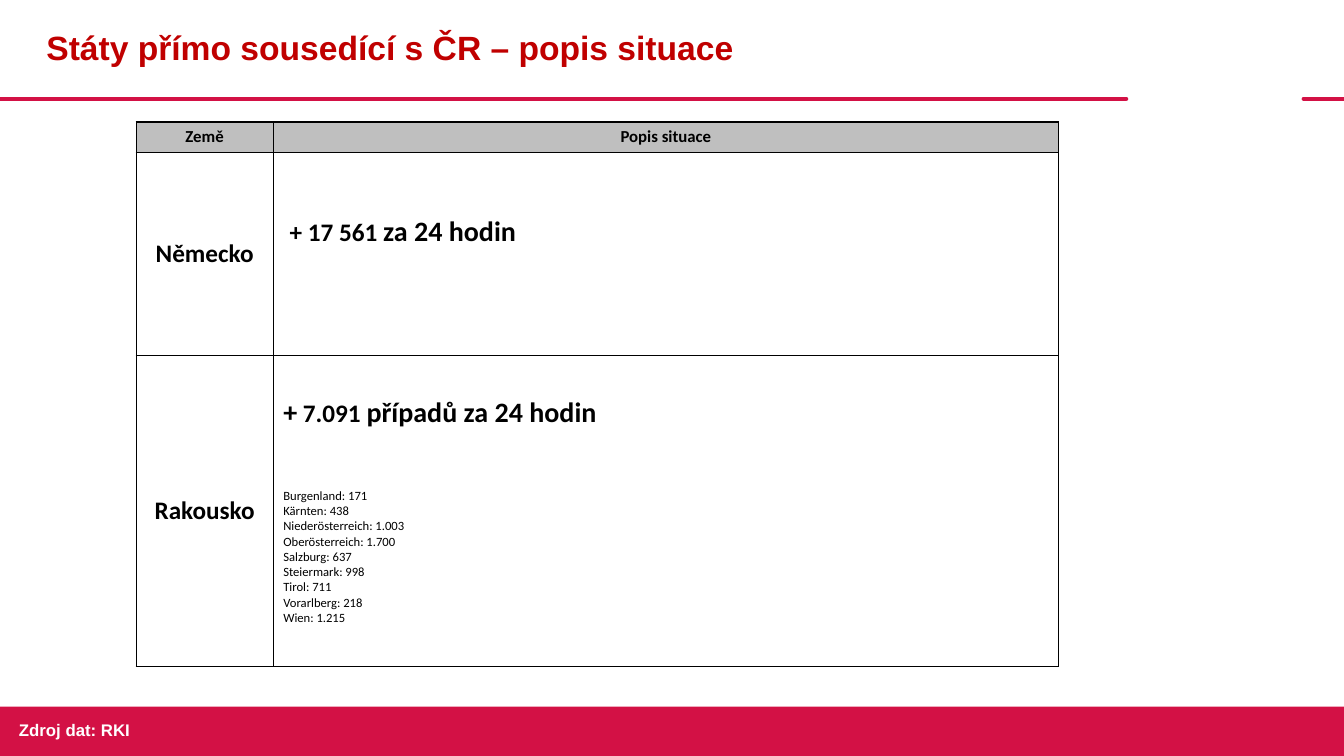
from lxml import etree
from pptx import Presentation
from pptx.dml.color import RGBColor
from pptx.enum.shapes import MSO_CONNECTOR, MSO_SHAPE
from pptx.enum.text import MSO_ANCHOR, PP_ALIGN
from pptx.oxml import parse_xml
from pptx.oxml.ns import nsdecls, qn
from pptx.util import Inches, Pt

CRIMSON = RGBColor(0xD3, 0x11, 0x45)
TITLE_RED = RGBColor(0xC0, 0x00, 0x00)
HEADER_GREY = RGBColor(0xBF, 0xBF, 0xBF)
BLACK = RGBColor(0, 0, 0)
WHITE = RGBColor(0xFF, 0xFF, 0xFF)

TITLE = "Státy přímo sousedící s ČR – popis situace"
SOURCE = "Zdroj dat: RKI"
HEADERS = ["Země", "Popis situace"]
COUNTRIES = ["Německo", "Rakousko"]
# Each headline is a list of (text, size) spans
GERMANY = [(" ", 20), ("+ 17 561 ", 18), ("za 24 hodin", 20)]
AUSTRIA = [("+", 20), ("\u00a07.091 ", 18), ("případů za 24 hodin", 20)]
AUSTRIAN_STATES = [
    ("Burgenland", "171"), ("Kärnten", "438"), ("Niederösterreich", "1.003"),
    ("Oberösterreich", "1.700"), ("Salzburg", "637"), ("Steiermark", "998"),
    ("Tirol", "711"), ("Vorarlberg", "218"), ("Wien", "1.215"),
]
COLUMN_WIDTHS = [1.36, 7.79]
ROW_HEIGHTS = [0.3, 2.01, 3.09]
RULES = [(0, 11.17), (12.93, 13.33)]
RULE_TOP = 0.98


def style(font, size, color, name="Calibri", bold=True):
    font.name, font.size, font.bold = name, Pt(size), bold
    font.color.rgb = color


def add_rule(page, start, end):
    rule = page.shapes.add_connector(
        MSO_CONNECTOR.STRAIGHT, Inches(start), Inches(RULE_TOP), Inches(end), Inches(RULE_TOP))
    rule.line.color.rgb = CRIMSON
    rule.line.width = Pt(3)
    rule.get_or_add_ln().set("cap", "rnd")
    etree.SubElement(rule.element.spPr, qn("a:effectLst"))


def add_borders(cell):
    properties = cell._tc.get_or_add_tcPr()
    for side in ("lnL", "lnR", "lnT", "lnB"):
        properties.append(parse_xml(
            f'<a:{side} {nsdecls("a")} w="{Pt(1)}"><a:solidFill>'
            f'<a:srgbClr val="{BLACK}"/></a:solidFill></a:{side}>'))


def write_label(cell, text, size):
    para = cell.text_frame.paragraphs[0]
    para.text = text
    para.alignment = PP_ALIGN.CENTER
    style(para.font, size, BLACK)


def write_headline(cell, spans):
    para = cell.text_frame.paragraphs[0]
    for text, size in spans:
        span = para.add_run()
        span.text = text
        style(span.font, size, BLACK)
    return para


def add_table(page):
    frame = page.shapes.add_table(
        len(ROW_HEIGHTS), len(COLUMN_WIDTHS), Inches(1.35), Inches(1.21),
        Inches(sum(COLUMN_WIDTHS)), Inches(sum(ROW_HEIGHTS)))
    table = frame.table
    for column, width in zip(table.columns, COLUMN_WIDTHS):
        column.width = Inches(width)
    for row, height in zip(table.rows, ROW_HEIGHTS):
        row.height = Inches(height)
    for cell in table.iter_cells():
        cell.vertical_anchor = MSO_ANCHOR.MIDDLE
        add_borders(cell)
        cell.fill.background()

    for column, header in enumerate(HEADERS):
        cell = table.cell(0, column)
        cell.fill.solid()
        cell.fill.fore_color.rgb = HEADER_GREY
        write_label(cell, header, 12)
    for row, country in enumerate(COUNTRIES, start=1):
        write_label(table.cell(row, 0), country, 18)

    germany, austria = table.cell(1, 1), table.cell(2, 1)
    germany.margin_bottom = Inches(0.31)
    para = write_headline(germany, GERMANY)
    para.alignment = PP_ALIGN.JUSTIFY
    para.line_spacing = Pt(12)
    para.space_after = Pt(6)

    write_headline(austria, AUSTRIA).space_after = Pt(41.5)
    for state, cases in AUSTRIAN_STATES:
        para = austria.text_frame.add_paragraph()
        para.text = f"{state}: {cases}"
        style(para.font, 9, BLACK, bold=False)


def add_title(page):
    title = page.shapes.title
    title.left, title.top = Inches(0.36), Inches(0)
    title.width, title.height = Inches(10.81), Inches(0.98)
    title.text_frame.text = TITLE
    title.text_frame.vertical_anchor = MSO_ANCHOR.MIDDLE
    para = title.text_frame.paragraphs[0]
    para.alignment = PP_ALIGN.LEFT
    para.line_spacing = 0.9
    style(para.font, 24, TITLE_RED, "Arial")


def add_footer(page):
    band = page.shapes.add_shape(
        MSO_SHAPE.RECTANGLE, Inches(0), Inches(7.01), Inches(13.33), Inches(0.49))
    band.shadow.inherit = False
    band.fill.solid()
    band.fill.fore_color.rgb = CRIMSON
    band.line.fill.background()
    box = page.shapes.add_textbox(Inches(0.09), Inches(7.09), Inches(8.46), Inches(0.3))
    box.text_frame.word_wrap = True
    para = box.text_frame.paragraphs[0]
    para.text = SOURCE
    style(para.font, 12, WHITE, "Arial")


def main():
    deck = Presentation()
    deck.slide_width, deck.slide_height = Inches(13.33), Inches(7.5)
    page = deck.slides.add_slide(deck.slide_layouts[5])
    for start, end in RULES:
        add_rule(page, start, end)
    add_title(page)
    add_table(page)
    add_footer(page)
    deck.save("out.pptx")


if __name__ == "__main__":
    main()
